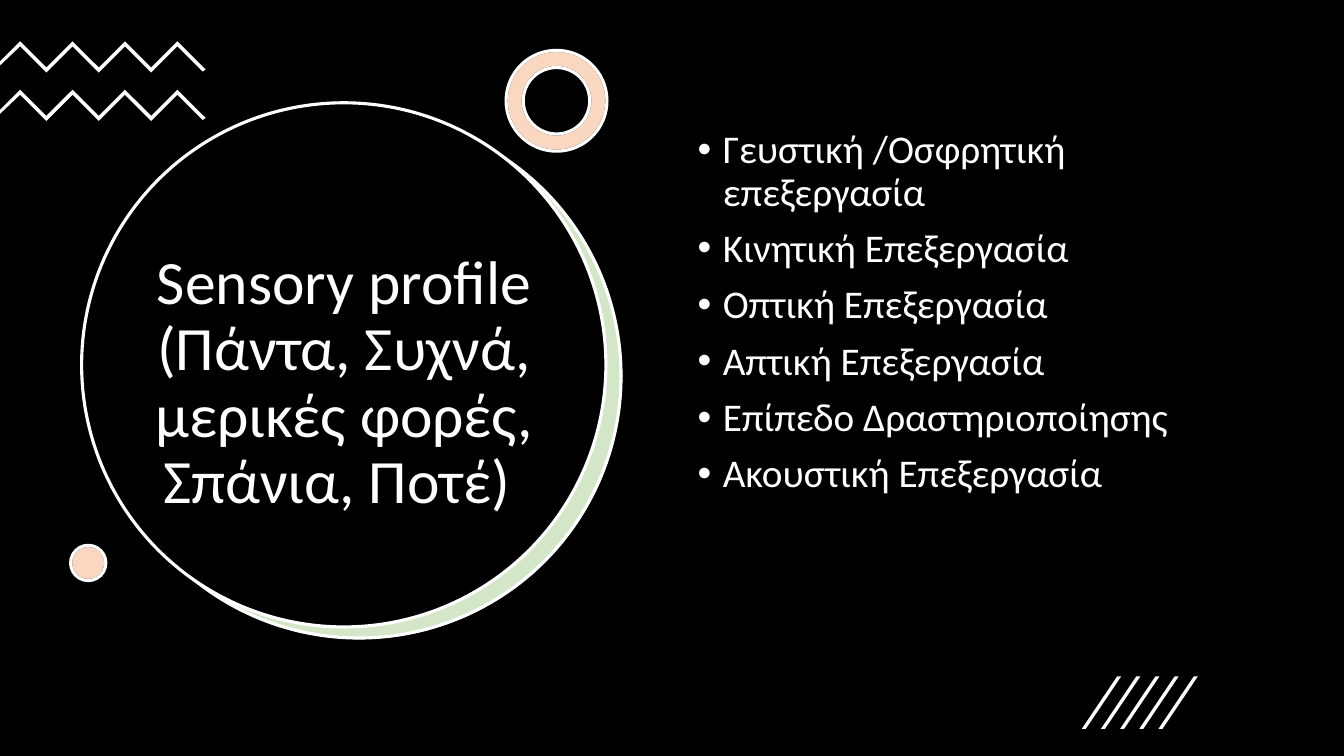
from dataclasses import dataclass

from lxml import etree
from pptx import Presentation
from pptx import util as u
from pptx.dml.color import RGBColor
from pptx.enum import shapes, text
from pptx.oxml.ns import qn


@dataclass(frozen=True)
class Theme:
    """Colours, type sizes and line width of the slide."""
    dark: str = "000000"
    light: str = "FFFFFF"
    green: str = "70AD47"
    orange: str = "ED7D31"
    font: str = "Calibri"
    title: int = 44
    body: int = 28
    line: float = 2.25
    tint: int = 30


T = Theme()
W, H = 13.33, 7.5
TITLE = "Sensory profile (Πάντα, Συχνά, μερικές φορές, Σπάνια, Ποτέ) "
TOPICS = [
    "Γευστική /Οσφρητική επεξεργασία",
    "Κινητική Επεξεργασία",
    "Οπτική Επεξεργασία",
    "Απτική Επεξεργασία",
    "Επίπεδο Δραστηριοποίησης",
    "Ακουστική Επεξεργασία",
]


def paint(sp, fill, line=None, alpha=None):
    """Set fill, opacity in percent and outline of a shape."""
    sp.shadow.inherit = False
    sp.fill.solid()
    sp.fill.fore_color.rgb = RGBColor.from_string(fill)
    if alpha:
        clr = sp.fill._xPr.find(qn("a:solidFill"))[0]
        etree.SubElement(clr, qn("a:alpha"), val=str(alpha * 1000))
    if line:
        sp.line.color.rgb = RGBColor.from_string(line)
        sp.line.width = u.Pt(T.line)
    else:
        sp.line.fill.background()
    return sp


def preset(s, kind, box, fill, line=None, alpha=None):
    """Add a painted preset shape in a box given in inches."""
    sp = s.shapes.add_shape(kind, *map(u.Inches, box))
    return paint(sp, fill, line, alpha)


def polygon(s, points):
    """Add a closed light polygon through points in inches."""
    pts = [(u.Inches(x), u.Inches(y)) for x, y in points]
    fb = s.shapes.build_freeform(*pts[0])
    fb.add_line_segments(pts[1:], close=True)
    return paint(fb.convert_to_shape(), T.light)


def text_frame(s, box, anchor):
    """Add a wrapping text box and return its frame."""
    tf = s.shapes.add_textbox(*map(u.Inches, box)).text_frame
    tf.word_wrap = True
    tf.vertical_anchor = anchor
    return tf


def add_text(p, words, size):
    """Add one light run to a paragraph."""
    p.line_spacing = 0.9
    r = p.add_run()
    r.text = words
    r.font.name = T.font
    r.font.size = u.Pt(size)
    r.font.color.rgb = RGBColor.from_string(T.light)


def title_disc(s, box):
    """Draw the disc with its green crescent and the title inside."""
    x, y, d, _ = box
    oval = shapes.MSO_SHAPE.OVAL
    preset(s, oval, (x + 0.16, y + 0.12, d, d), T.light)
    preset(s, oval, (x + 0.15, y + 0.11, d, d), T.green, T.light, T.tint)
    preset(s, oval, box, T.dark, T.light)
    tf = text_frame(s, (x + 0.4, y + 1.03, 4.41, 3.52), text.MSO_ANCHOR.MIDDLE)
    p = tf.paragraphs[0]
    p.alignment = text.PP_ALIGN.CENTER
    add_text(p, TITLE, T.title)


def tinted(s, kind, box, hole=None):
    """Draw a light shape with a tinted one of the same outline over it."""
    for fill, line, alpha in ((T.light, T.dark, None), (T.orange, T.light, T.tint)):
        sp = preset(s, kind, box, fill, line, alpha)
        if hole:
            sp.adjustments[0] = hole


def zigzags(s, box):
    """Draw two zigzag bands, one at the top and one at the foot of the box."""
    x, y, w, h = box
    step, thick, band = 0.26, 0.05, 0.31
    rows = []
    for top in (y, y + h - band):
        peaks = [(x + 0.2 + step * i, top + step * (i % 2)) for i in range(7)]
        upper = peaks + [(x + w, top + 0.28), (x + w - 0.03, top + 0.3)]
        lower = [(px, py + thick) for px, py in reversed(peaks)]
        rows.append(polygon(s, upper + lower + [(x, top + 0.24), (x, top + 0.2)]))
    s.shapes.add_group_shape(rows)


def topic_list(s, box):
    """Write the bulleted topics."""
    tf = text_frame(s, box, text.MSO_ANCHOR.TOP)
    for i, topic in enumerate(TOPICS):
        p = tf.add_paragraph() if i else tf.paragraphs[0]
        add_text(p, topic, T.body)
        p.space_before = u.Pt(10)
        pPr = p._p.get_or_add_pPr()
        pPr.set("marL", str(u.Inches(0.25)))
        pPr.set("indent", str(u.Inches(-0.25)))
        etree.SubElement(pPr, qn("a:buFont"), typeface="Arial")
        etree.SubElement(pPr, qn("a:buChar"), char="•")


def stripes(s, box, count=5):
    """Draw equally spaced slanted stripes across the box."""
    x, y, w, h = box
    lean, thick = 0.35, 0.04
    step = (w - lean - thick) / (count - 1)
    bars = []
    for left in (x + step * i for i in range(count)):
        bars.append(polygon(s, [
            (left + thick, y + h), (left, y + h),
            (left + lean, y), (left + lean + thick, y)]))
    s.shapes.add_group_shape(bars)


def main():
    """Build and save the slide."""
    prs = Presentation()
    prs.slide_width, prs.slide_height = u.Inches(W), u.Inches(H)
    s = prs.slides.add_slide(prs.slide_layouts[6])
    preset(s, shapes.MSO_SHAPE.RECTANGLE, (0, 0, W, H), T.dark)
    title_disc(s, (0.81, 1.02, 5.2, 5.2))
    zigzags(s, (0, 0.41, 2.04, 0.79))
    tinted(s, shapes.MSO_SHAPE.DONUT, (5.02, 0.5, 1, 1), 0.17)
    tinted(s, shapes.MSO_SHAPE.OVAL, (0.7, 5.41, 0.35, 0.35))
    topic_list(s, (6.82, 1.24, 5.71, 4.76))
    stripes(s, (10.73, 6.71, 1.15, 0.52))
    prs.save("out.pptx")


if __name__ == "__main__":
    main()
